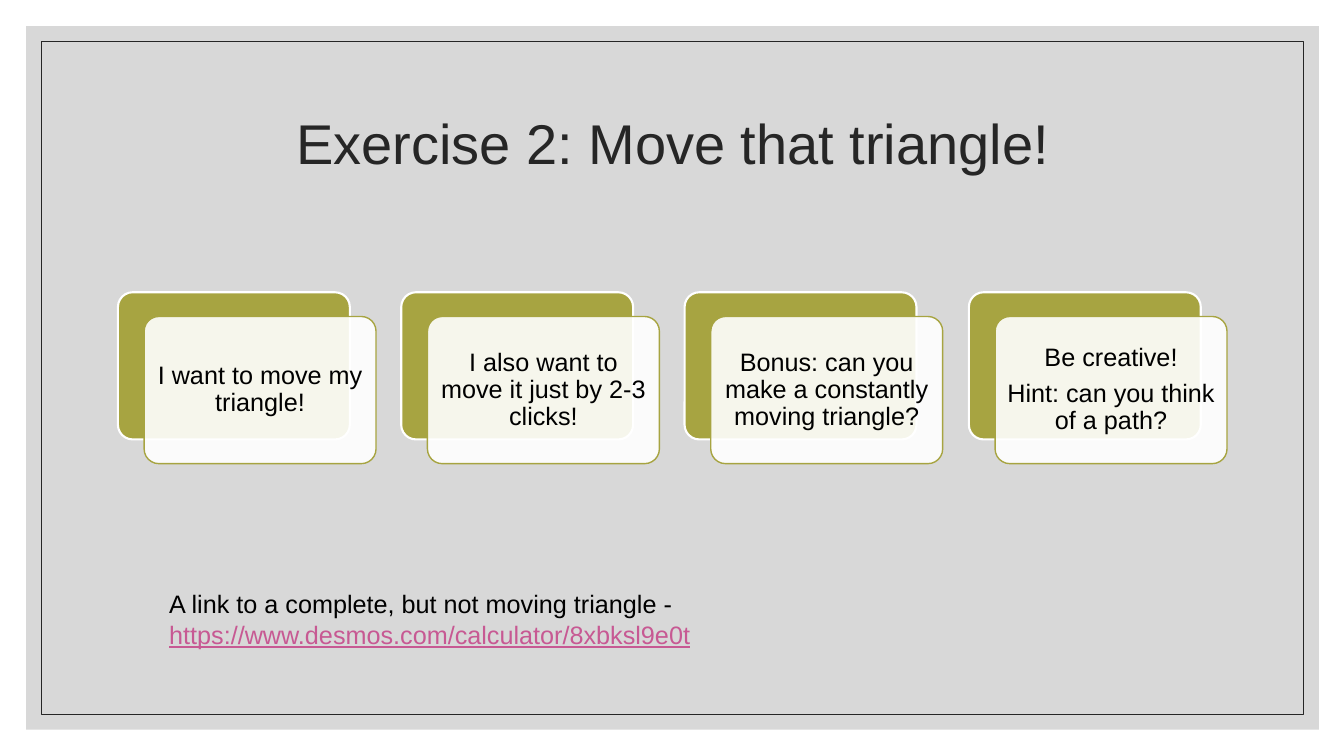
import dataclasses

import lxml.etree
import pptx
import pptx.dml.color
import pptx.enum.shapes
import pptx.enum.text
import pptx.oxml.ns
import pptx.util

EMU_PER_PX = 9144  # 100 px to the inch

CARDS = [
    ["I want to move my triangle!"],
    ["I also want to move it just by 2-3 clicks!"],
    ["Bonus: can you make a constantly moving triangle?"],
    ["Be creative!", "Hint: can you think of a path?"],
]


@dataclasses.dataclass(frozen=True)
class Theme:
    font: str = "Arial"
    title_size: int = 40
    body_size: int = 18
    panel: str = "BFBFBF"
    dark: str = "262626"
    olive: str = "A7A441"
    white: str = "FFFFFF"
    text: str = "000000"
    link: str = "C75993"


THEME = Theme()


def px(n):
    return pptx.util.Emu(n * EMU_PER_PX)


def rgb(color):
    return pptx.dml.color.RGBColor.from_string(color)


def add_run(p, text, size=THEME.body_size, color=THEME.text, underline=None):
    r = p.add_run()
    r.text = text
    r.font.name = THEME.font
    r.font.size = pptx.util.Pt(size)
    r.font.color.rgb = rgb(color)
    r.font.underline = underline


def write_text(tf, paragraphs, align=pptx.enum.text.PP_ALIGN.CENTER,
               anchor=pptx.enum.text.MSO_ANCHOR.MIDDLE, line_spacing=0.9,
               gap=0, **run_format):
    tf.word_wrap = True
    tf.vertical_anchor = anchor
    for i, text in enumerate(paragraphs):
        p = tf.paragraphs[0] if i == 0 else tf.add_paragraph()
        p.alignment = align
        p.line_spacing = line_spacing
        p.space_before = pptx.util.Pt(gap if i else 0)
        add_run(p, text, **run_format)


def add_box(s, left, top, width, height, fill=None, opacity=100,
            line=None, line_width=1, radius=None):
    kinds = pptx.enum.shapes.MSO_SHAPE
    kind = kinds.RECTANGLE if radius is None else kinds.ROUNDED_RECTANGLE
    sp = s.shapes.add_shape(kind, px(left), px(top), px(width), px(height))
    sp.shadow.inherit = False
    if radius is not None:
        sp.adjustments[0] = radius
    if fill:
        sp.fill.solid()
        sp.fill.fore_color.rgb = rgb(fill)
        if opacity < 100:
            clr = sp.element.spPr.find(".//" + pptx.oxml.ns.qn("a:srgbClr"))
            lxml.etree.SubElement(clr, pptx.oxml.ns.qn("a:alpha"),
                                  val=str(opacity * 1000))
    else:
        sp.fill.background()
    if line:
        sp.line.color.rgb = rgb(line)
        sp.line.width = pptx.util.Pt(line_width)
    else:
        sp.line.fill.background()
    return sp


def add_frame(s):
    add_box(s, 26, 26, 1282, 698, fill=THEME.panel, opacity=60)
    add_box(s, 41, 41, 1252, 668, line=THEME.dark, line_width=0.5)


def add_title(s, text):
    sp = s.shapes.title
    sp.left, sp.top, sp.width, sp.height = map(px, (117, 70, 1100, 150))
    write_text(sp.text_frame, [text], size=THEME.title_size, color=THEME.dark)
    # Bring the title in front of the frame
    s.shapes.element.append(sp.element)


def add_card(s, left, top, paragraphs):
    width, height = 230, 146
    add_box(s, left, top, width, height, fill=THEME.olive,
            line=THEME.white, line_width=1.5, radius=0.1)
    sp = add_box(s, left + 26, top + 24, width, height, fill=THEME.white,
                 opacity=90, line=THEME.olive, radius=0.1)
    tf = sp.text_frame
    tf.margin_left = tf.margin_right = px(7)
    tf.margin_top = tf.margin_bottom = px(7)
    write_text(tf, paragraphs, gap=6.3)


def add_link_note(s, lead, address):
    sp = s.shapes.add_textbox(px(158), px(579), px(848), px(101))
    tf = sp.text_frame
    write_text(tf, [lead], align=pptx.enum.text.PP_ALIGN.LEFT,
               anchor=pptx.enum.text.MSO_ANCHOR.TOP, line_spacing=1.0)
    add_run(tf.paragraphs[0], address, color=THEME.link, underline=True)


def main():
    prs = pptx.Presentation()
    prs.slide_width, prs.slide_height = px(1333), px(750)
    s = prs.slides.add_slide(prs.slide_layouts.get_by_name("Title Only"))

    # Panel and heading
    add_frame(s)
    add_title(s, "Exercise 2: Move that triangle!")

    # Row of evenly spaced cards
    first, last = 117, 961
    for i, paragraphs in enumerate(CARDS):
        left = first + (last - first) * i // (len(CARDS) - 1)
        add_card(s, left, 290, paragraphs)

    # Address of the starting triangle
    add_link_note(s, "A link to a complete, but not moving triangle - ",
                  "https://www.desmos.com/calculator/8xbksl9e0t")

    prs.save("out.pptx")


if __name__ == "__main__":
    main()
